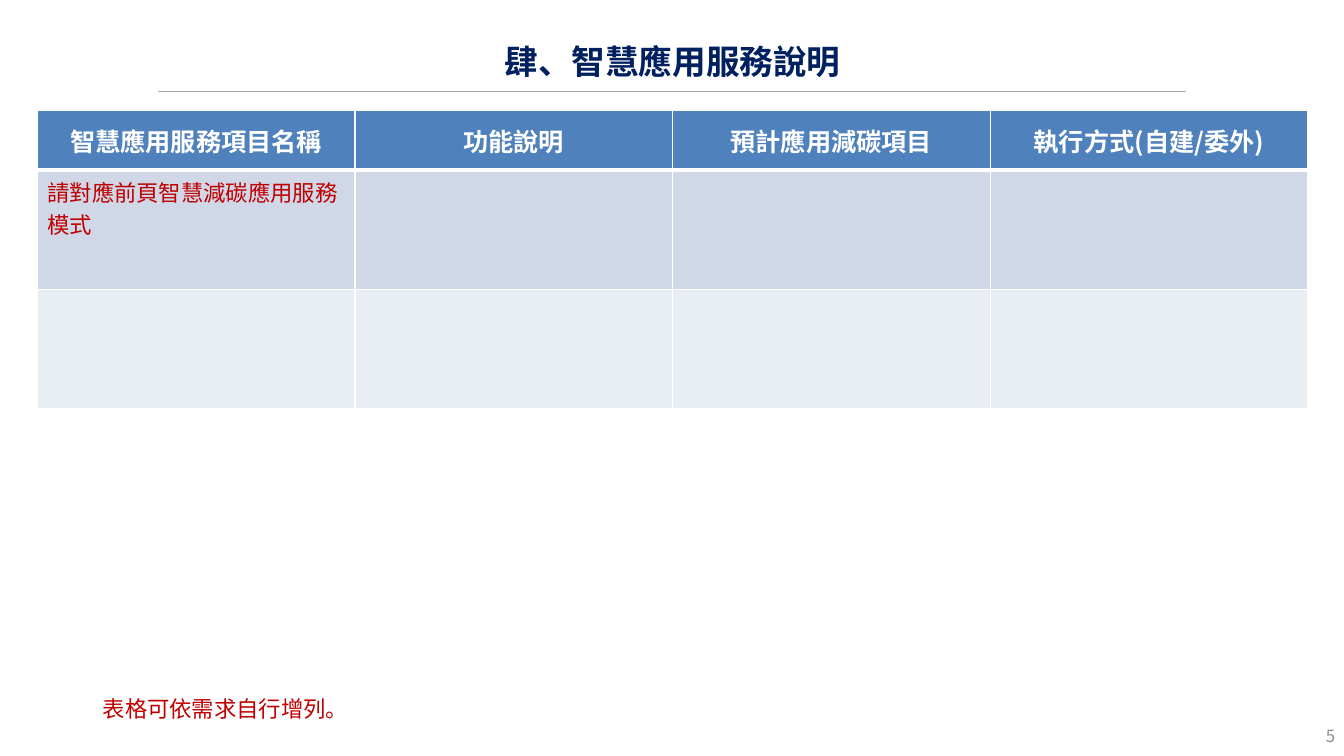
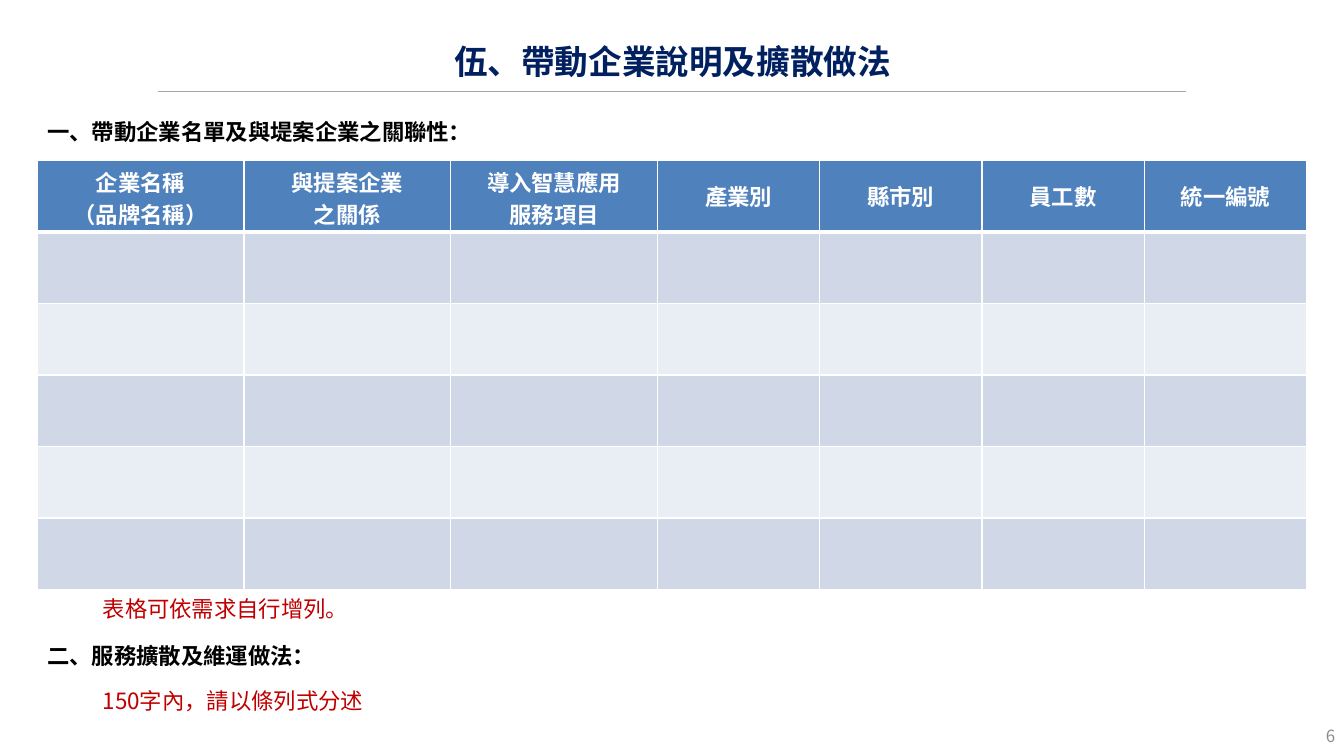
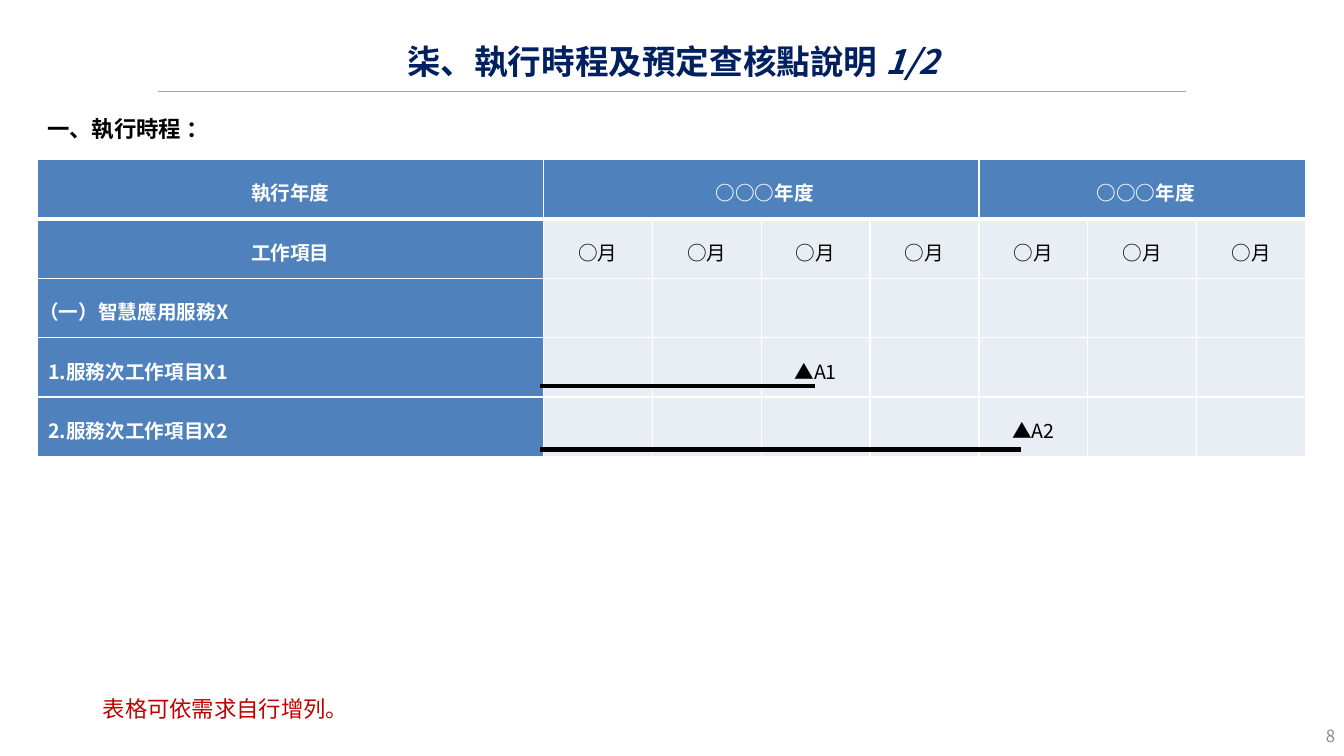
from dataclasses import dataclass, replace
from typing import Optional

from lxml.etree import SubElement
from pptx import Presentation
from pptx.dml.color import RGBColor
from pptx.enum.shapes import MSO_CONNECTOR
from pptx.enum.text import MSO_ANCHOR, PP_ALIGN
from pptx.oxml.ns import qn
from pptx.util import Pt

EMU_PER_PX = 9144  # 100 px to the inch
FONT = "Noto Sans CJK SC"

NAVY = RGBColor(0x00, 0x20, 0x60)
BLUE = RGBColor(0x4F, 0x81, 0xBD)
BAND_DARK = RGBColor(0xD0, 0xD8, 0xE8)
BAND_LIGHT = RGBColor(0xE9, 0xED, 0xF4)
RED = RGBColor(0xC0, 0x00, 0x00)
RULE_GREY = RGBColor(0xA6, 0xA6, 0xA6)
NUMBER_GREY = RGBColor(0x8C, 0x8C, 0x8C)
BLACK = RGBColor(0x00, 0x00, 0x00)
WHITE = RGBColor(0xFF, 0xFF, 0xFF)

TABLE_LEFT = 37
NOTE_LEFT = 92
ADD_ROWS_NOTE = "表格可依需求自行增列。"


@dataclass(frozen=True)
class Style:
    size: int
    color: RGBColor
    bold: bool = False
    align: PP_ALIGN = PP_ALIGN.LEFT
    leading: Optional[int] = None
    after: int = 0
    indent: int = 0


TITLE = Style(24, NAVY, True, PP_ALIGN.CENTER)
HEADING = Style(16, BLACK, True)
NOTE = Style(16, RED, leading=18, after=6)
PAGE_NUMBER = Style(12, NUMBER_GREY, align=PP_ALIGN.RIGHT)
HEADER = Style(18, WHITE, True, PP_ALIGN.CENTER)
SCHEDULE_HEADER = replace(HEADER, size=14, leading=25)
SCHEDULE_ITEM = replace(SCHEDULE_HEADER, align=PP_ALIGN.LEFT)
SCHEDULE_MONTH = replace(SCHEDULE_HEADER, color=BLACK, bold=False)


def px(n):
    return n * EMU_PER_PX


# Text
def style_paragraph(p, style):
    p.alignment = style.align
    if style.leading:
        p.line_spacing = Pt(style.leading)
    if style.after:
        p.space_after = Pt(style.after)
    pPr = p._p.get_or_add_pPr()
    if style.indent:
        pPr.set("marL", str(px(style.indent)))
    font = p.font
    font.size = Pt(style.size)
    font.bold = style.bold
    font.color.rgb = style.color
    font.name = FONT
    # East Asian glyphs take their typeface from a:ea
    SubElement(pPr.find(qn("a:defRPr")), qn("a:ea")).set("typeface", FONT)


def write_lines(tf, text, style):
    for i, line in enumerate(text.split("\n")):
        p = tf.add_paragraph() if i else tf.paragraphs[0]
        p.add_run().text = line
        style_paragraph(p, style)


def add_text(slide, left, top, width, height, text, style, anchor=MSO_ANCHOR.TOP):
    tf = slide.shapes.add_textbox(px(left), px(top), px(width), px(height)).text_frame
    tf.word_wrap = True
    tf.vertical_anchor = anchor
    write_lines(tf, text, style)
    return tf


def add_heading(slide, top, text, style=HEADING):
    add_text(slide, TABLE_LEFT, top, 610, 37, text, style)


def add_note(slide, top, text):
    add_text(slide, NOTE_LEFT, top, 881, 35, text, NOTE)


# Lines
def add_line(slide, left, right, y, color, weight):
    line = slide.shapes.add_connector(MSO_CONNECTOR.STRAIGHT, px(left), px(y), px(right), px(y))
    line.line.color.rgb = color
    line.line.width = Pt(weight)
    SubElement(line._element.spPr, qn("a:effectLst"))


# Tables
def add_borders(cell, top, bottom):
    tcPr = cell._tc.get_or_add_tcPr()
    for side, weight in (("L", 1), ("R", 1), ("T", top), ("B", bottom)):
        ln = SubElement(tcPr, qn(f"a:ln{side}"), w=str(Pt(weight)))
        fill = SubElement(ln, qn("a:solidFill"))
        SubElement(fill, qn("a:srgbClr"), val=str(WHITE))


def add_table(slide, top, cols, rows, fill_for):
    """Bordered table; fill_for(row, col) gives each cell's colour."""
    table = slide.shapes.add_table(len(rows), len(cols), px(TABLE_LEFT), px(top),
                                   px(sum(cols)), px(sum(rows))).table
    table.first_row = table.horz_banding = False
    for c, width in enumerate(cols):
        table.columns[c].width = px(width)
    for r, height in enumerate(rows):
        table.rows[r].height = px(height)
        for c in range(len(cols)):
            cell = table.cell(r, c)
            add_borders(cell, 3 if r == 1 else 1, 3 if r == 0 else 1)
            cell.fill.solid()
            cell.fill.fore_color.rgb = fill_for(r, c)
    return table


def banded_fill(row, col):
    if row == 0:
        return BLUE
    return BAND_DARK if row % 2 else BAND_LIGHT


def schedule_fill(row, col):
    return BLUE if row == 0 or col == 0 else BAND_LIGHT


def write_cell(cell, text, style, anchor=MSO_ANCHOR.MIDDLE):
    cell.vertical_anchor = anchor
    write_lines(cell.text_frame, text, style)


def write_header(table, labels, style):
    for c, label in enumerate(labels):
        write_cell(table.cell(0, c), label, style)


def write_schedule_cell(table, row, col, text, style):
    cell = table.cell(row, col)
    cell.margin_left = cell.margin_right = px(2)
    cell.margin_top = cell.margin_bottom = 0
    write_cell(cell, text, style)


# Slides
def new_slide(prs, title, number, part=""):
    slide = prs.slides.add_slide(prs.slide_layouts[6])
    add_line(slide, 157, 1176, 91, RULE_GREY, 0.75)
    tf = add_text(slide, 226, 31, 882, 59, title, TITLE, MSO_ANCHOR.MIDDLE)
    if part:
        r = tf.paragraphs[0].add_run()
        r.text = part
        r.font.italic = True
    add_text(slide, 1267, 710, 67, 40, str(number), PAGE_NUMBER, MSO_ANCHOR.MIDDLE)
    return slide


def build_services(prs):
    slide = new_slide(prs, "肆、智慧應用服務說明", 5)
    table = add_table(slide, 110, [315] * 4, [59, 118, 118], banded_fill)
    write_header(table, ["智慧應用服務項目名稱", "功能說明", "預計應用減碳項目",
                         "執行方式(自建/委外)"], HEADER)
    write_cell(table.cell(1, 0), "請對應前頁智慧減碳應用服務模式", Style(16, RED),
               MSO_ANCHOR.TOP)
    add_note(slide, 686, ADD_ROWS_NOTE)


def build_companies(prs):
    slide = new_slide(prs, "伍、帶動企業說明及擴散做法", 6)
    add_heading(slide, 112, "一、帶動企業名單及與堤案企業之關聯性：")
    table = add_table(slide, 159, [205] * 3 + [161] * 4, [71] * 6, banded_fill)
    write_header(table, ["企業名稱\n（品牌名稱）", "與提案企業\n之關係", "導入智慧應用\n服務項目",
                         "產業別", "縣市別", "員工數", "統一編號"], replace(HEADER, size=16))
    add_note(slide, 587, ADD_ROWS_NOTE)
    add_heading(slide, 632, "二、服務擴散及維運做法：")
    add_note(slide, 678, "150字內，請以條列式分述")


def build_schedule(prs):
    slide = new_slide(prs, "柒、執行時程及預定查核點說明 ", 8, part="1/2")
    add_heading(slide, 111, "一、執行時程 ：", replace(HEADING, leading=18, after=6))
    months = 7
    table = add_table(slide, 158, [502] + [108] * months, [59] * 5, schedule_fill)

    # Years and months
    write_schedule_cell(table, 0, 0, "執行年度", SCHEDULE_HEADER)
    for first, last in ((1, 4), (5, 7)):
        table.cell(0, first).merge(table.cell(0, last))
        write_schedule_cell(table, 0, first, "○○○年度", replace(SCHEDULE_HEADER, indent=7))
    write_schedule_cell(table, 1, 0, "工作項目", SCHEDULE_HEADER)
    for month in range(1, months + 1):
        write_schedule_cell(table, 1, month, "○月", SCHEDULE_MONTH)

    # Work items, checkpoints and their bars
    write_schedule_cell(table, 2, 0, "（一）智慧應用服務X", SCHEDULE_ITEM)
    for row, item, month, mark, bar_end, bar_y in (
            (3, "1.服務次工作項目X1", 3, "▲A1", 808, 383),
            (4, "2.服務次工作項目X2", 5, "▲A2", 1013, 446)):
        write_schedule_cell(table, row, 0, item, replace(SCHEDULE_ITEM, indent=9))
        write_schedule_cell(table, row, month, mark, SCHEDULE_MONTH)
        add_line(slide, 536, bar_end, bar_y, BLACK, 3)
    add_note(slide, 686, ADD_ROWS_NOTE)


def main():
    prs = Presentation()
    prs.slide_width, prs.slide_height = px(1333), px(750)
    build_services(prs)
    build_companies(prs)
    build_schedule(prs)
    prs.save("out.pptx")


if __name__ == "__main__":
    main()
